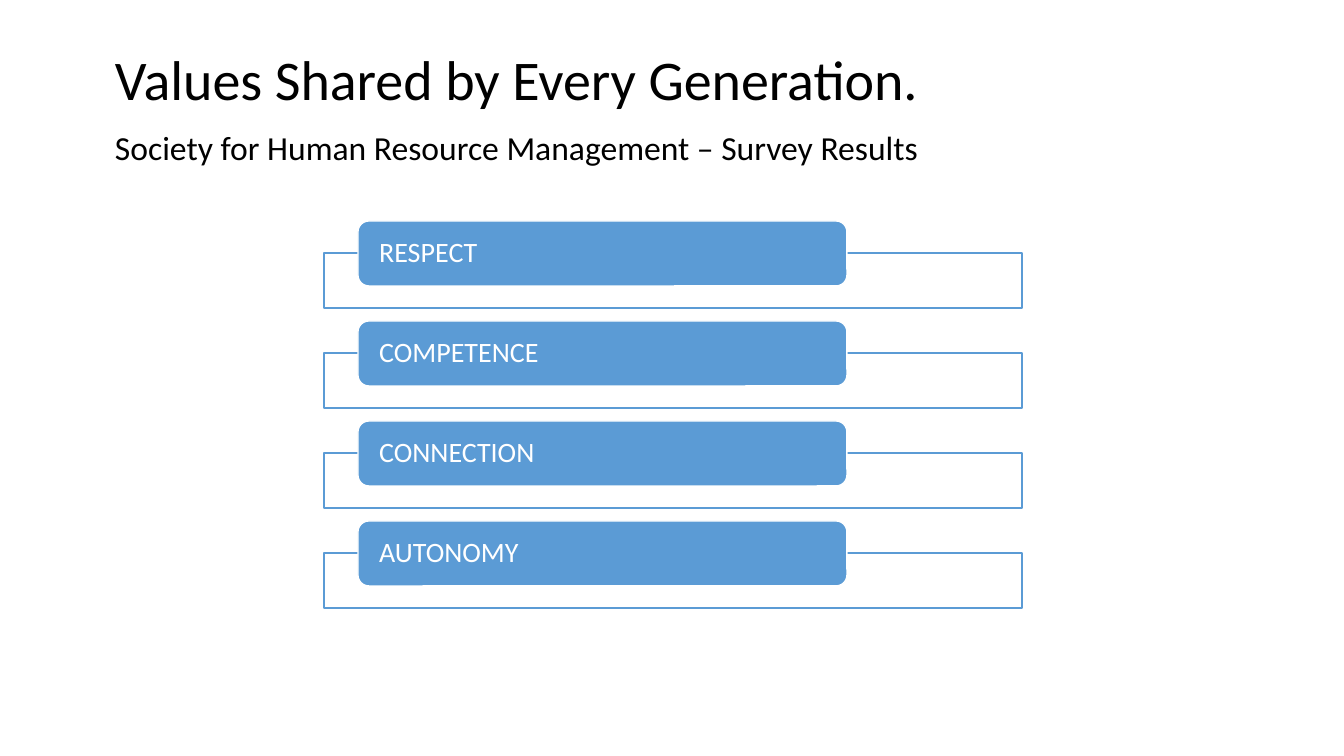
from pptx import Presentation
from pptx.dml.color import RGBColor
from pptx.enum.shapes import MSO_SHAPE as Preset
from pptx.enum.text import MSO_ANCHOR as Anchor, PP_ALIGN as Align
from pptx.oxml.ns import qn
from pptx.util import Pt
from lxml import etree

# Content
TITLE = "Values Shared by Every Generation."
SUBTITLE = "Society for Human Resource Management – Survey Results"
VALUES = ["RESPECT", "COMPETENCE", "CONNECTION", "AUTONOMY"]

COLORS = {"text": "000000", "accent": "5B9BD5", "white": "FFFFFF"}
FONT = "Calibri"

# Layout in px
EMU_PER_PX = 914400 / 100.8
SLIDE_SIZE = (1344, 756)
TITLE_BOX = (93, 40, 1159, 146)
FRAME_BOX = (324, 253, 698, 55)
LABEL_BOX = (358, 221, 489, 65)
ROW_PITCH = 100


def px(length):
    return round(length * EMU_PER_PX)


def color(name):
    return RGBColor.from_string(COLORS[name])


def write(paragraph, text, *, size, ink, space_before=0):
    paragraph.text = text
    paragraph.alignment = Align.LEFT
    paragraph.line_spacing = 0.9
    paragraph.space_before = Pt(space_before)
    font = paragraph.font
    font.name, font.size = FONT, Pt(size)
    font.color.rgb = color(ink)


def set_frame(text_frame, left, top, right, bottom):
    text_frame.word_wrap = True
    text_frame.vertical_anchor = Anchor.MIDDLE
    text_frame.margin_left, text_frame.margin_top = px(left), px(top)
    text_frame.margin_right, text_frame.margin_bottom = px(right), px(bottom)


def add_box(slide, preset, box, row, *, fill, line):
    left, top, width, height = box
    shape = slide.shapes.add_shape(
        preset, px(left), px(top + row * ROW_PITCH), px(width), px(height))
    shape.shadow.inherit = False
    shape.fill.solid()
    shape.fill.fore_color.rgb = color(fill)
    shape.line.color.rgb = color(line)
    shape.line.width = Pt(1)
    return shape


def set_opacity(shape, percent):
    fill_color = shape.fill._xPr.find(qn("a:solidFill"))[0]
    etree.SubElement(fill_color, qn("a:alpha"), val=str(percent * 1000))


def main():
    presentation = Presentation()
    presentation.slide_width, presentation.slide_height = map(px, SLIDE_SIZE)
    slide = presentation.slides.add_slide(presentation.slide_layouts[5])

    # Title and subtitle
    title = slide.shapes.title
    title.left, title.top, title.width, title.height = map(px, TITLE_BOX)
    set_frame(title.text_frame, 22, 5, 10, 11)
    write(title.text_frame.paragraphs[0], TITLE, size=40, ink="text")
    write(title.text_frame.add_paragraph(), SUBTITLE,
          size=24, ink="text", space_before=13)

    # Value list: an open frame with a rounded label over its top edge
    for row, value in enumerate(VALUES):
        frame = add_box(slide, Preset.RECTANGLE, FRAME_BOX, row,
                        fill="white", line="accent")
        set_opacity(frame, 90)
        label = add_box(slide, Preset.ROUNDED_RECTANGLE, LABEL_BOX, row,
                        fill="accent", line="white")
        set_frame(label.text_frame, 18, 0, 18, 0)
        write(label.text_frame.paragraphs[0], value, size=20, ink="white")

    presentation.save("out.pptx")


if __name__ == "__main__":
    main()
